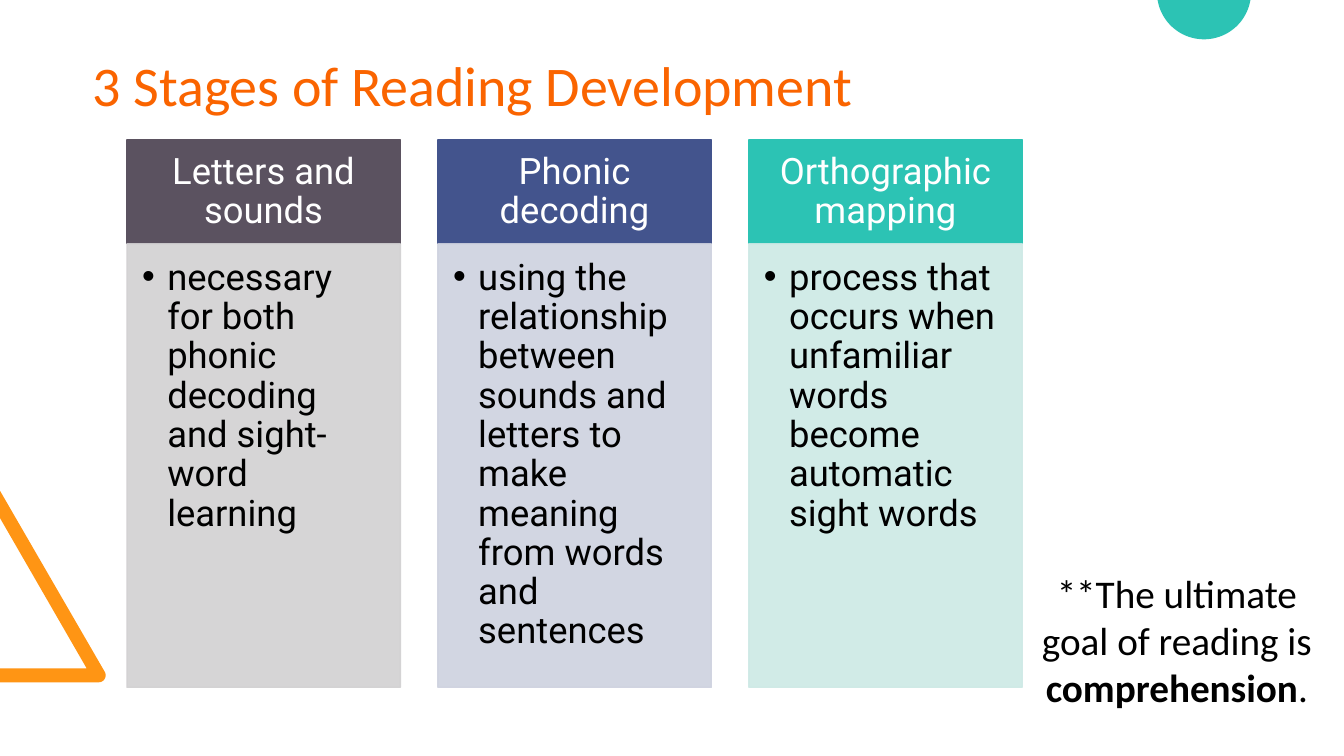
from math import asin, cos, degrees, radians, sin

from lxml.etree import SubElement
from pptx import Presentation
from pptx.dml.color import RGBColor
from pptx.enum.shapes import MSO_SHAPE
from pptx.enum.text import MSO_ANCHOR, PP_ALIGN
from pptx.oxml.ns import qn
from pptx.util import Pt

WHITE = RGBColor(0xFF, 0xFF, 0xFF)
BLACK = RGBColor(0x00, 0x00, 0x00)
TITLE_ORANGE = RGBColor(0xFA, 0x64, 0x00)
TRIANGLE_ORANGE = RGBColor(0xFF, 0x95, 0x14)
TEAL = RGBColor(0x2C, 0xC3, 0xB4)
PLUM = RGBColor(0x5B, 0x52, 0x60)
BLUE = RGBColor(0x43, 0x54, 0x8D)
PALE_PLUM = RGBColor(0xD2, 0xD1, 0xD2)
PALE_BLUE = RGBColor(0xCE, 0xD2, 0xDF)
PALE_TEAL = RGBColor(0xCD, 0xE9, 0xE5)

STAGES = [
    ("Letters and sounds", PLUM, PALE_PLUM,
     "necessary for both phonic decoding and sight-word learning"),
    ("Phonic decoding", BLUE, PALE_BLUE,
     "using the relationship between sounds and letters to make meaning "
     "from words and sentences"),
    ("Orthographic mapping", TEAL, PALE_TEAL,
     "process that occurs when unfamiliar words become automatic sight words"),
]

presentation = Presentation()
presentation.slide_width = Pt(960)
presentation.slide_height = Pt(540)
slide = presentation.slides.add_slide(presentation.slide_layouts[6])


def arc(center_x, center_y, radius, start, end, steps):
    """Points along an arc, with angles in degrees."""
    angles = [radians(start + (end - start) * i / steps) for i in range(steps + 1)]
    return [(center_x + radius * cos(a), center_y + radius * sin(a)) for a in angles]


def add_panel(top, height, color, text, margins):
    """A filled rectangle in the current column, with one paragraph."""
    panel = slide.shapes.add_shape(
        MSO_SHAPE.RECTANGLE, Pt(left), Pt(top), Pt(195.3), Pt(height))
    panel.shadow.inherit = False
    panel.fill.solid()
    panel.fill.fore_color.rgb = color
    panel.line.color.rgb = color
    panel.line.width = Pt(1)
    frame = panel.text_frame
    frame.word_wrap = True
    (frame.margin_left, frame.margin_top,
     frame.margin_right, frame.margin_bottom) = [Pt(m) for m in margins]
    paragraph = frame.paragraphs[0]
    paragraph.text = text
    paragraph.line_spacing = 0.9
    return panel, paragraph


# Corner decorations: cropped triangle outline and cropped circle
triangle = [(0, 487.4), (0, 477.4), (61.9, 477.4), (0, 370.1), (0, 350.6)]
triangle += arc(70.5, 482.4, 5, -30, 90, 12)
edge_angle = degrees(asin(5.5 / 33.6))
circle = arc(860, -5.5, 33.6, edge_angle, 180 - edge_angle, 60)
for points, color in [(triangle, TRIANGLE_ORANGE), (circle, TEAL)]:
    corners = [(Pt(x), Pt(y)) for x, y in points]
    builder = slide.shapes.build_freeform(*corners[0], scale=1.0)
    builder.add_line_segments(corners[1:], close=True)
    decoration = builder.convert_to_shape()
    decoration.shadow.inherit = False
    decoration.fill.solid()
    decoration.fill.fore_color.rgb = color
    decoration.line.fill.background()

# Title
title = slide.shapes.add_textbox(Pt(59), Pt(10.8), Pt(828), Pt(104.4))
title.text_frame.word_wrap = True
title.text_frame.vertical_anchor = MSO_ANCHOR.MIDDLE
paragraph = title.text_frame.paragraphs[0]
paragraph.text = "3 Stages of Reading Development"
paragraph.line_spacing = 0.9
paragraph.font.name = "Calibri"
paragraph.font.size = Pt(40)
paragraph.font.color.rgb = TITLE_ORANGE

# Three stage columns: header over bulleted body
for column, (heading, color, pale_color, description) in enumerate(STAGES):
    left = 90.7 + 222.1 * column
    header, header_paragraph = add_panel(
        100.1, 74.1, color, heading, (14.4, 8.6, 14.4, 8.6))
    header.text_frame.vertical_anchor = MSO_ANCHOR.MIDDLE
    header_paragraph.alignment = PP_ALIGN.CENTER

    body, body_paragraph = add_panel(
        174.2, 316.8, pale_color, description, (10.8, 10.8, 14.4, 16.6))
    body.text_frame.vertical_anchor = MSO_ANCHOR.TOP
    body_paragraph.alignment = PP_ALIGN.LEFT
    for color_element in body.element.spPr.iter(qn("a:srgbClr")):
        SubElement(color_element, qn("a:alpha"), val="90000")
    properties = body_paragraph._p.get_or_add_pPr()
    properties.set("marL", str(Pt(18)))
    properties.set("indent", str(-Pt(18)))
    SubElement(properties, qn("a:buFont"), typeface="Arial")
    SubElement(properties, qn("a:buChar"), char="•")

    for paragraph, text_color in [(header_paragraph, WHITE), (body_paragraph, BLACK)]:
        paragraph.font.name = "Roboto"
        paragraph.font.size = Pt(26)
        paragraph.font.color.rgb = text_color

# Closing note
note = slide.shapes.add_textbox(Pt(736.6), Pt(403.2), Pt(208), Pt(108.7))
note.text_frame.word_wrap = True
paragraph = note.text_frame.paragraphs[0]
paragraph.alignment = PP_ALIGN.CENTER
for text, bold in [("**The ultimate goal of reading is ", False),
                   ("comprehension", True), (".", False)]:
    run = paragraph.add_run()
    run.text = text
    run.font.bold = bold
paragraph.font.name = "Calibri"
paragraph.font.size = Pt(28)
paragraph.font.color.rgb = BLACK

presentation.save("out.pptx")
